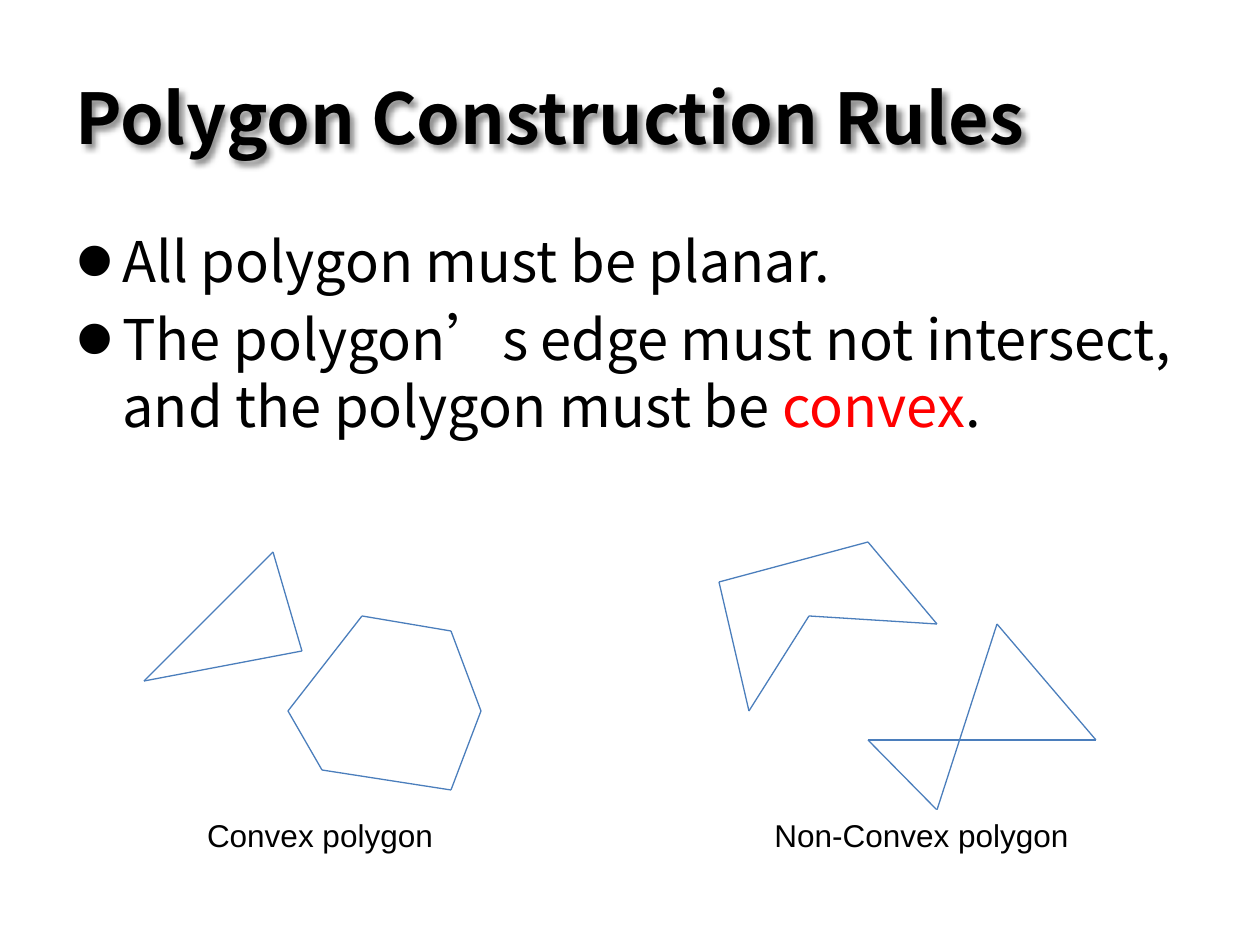
import itertools
import pptx
import pptx.dml.color
import pptx.enum.shapes
import pptx.enum.text
import pptx.oxml
import pptx.oxml.ns
import pptx.util

BLACK = pptx.dml.color.RGBColor(0x00, 0x00, 0x00)
WHITE = pptx.dml.color.RGBColor(0xFF, 0xFF, 0xFF)
RED = pptx.dml.color.RGBColor(0xFF, 0x00, 0x00)
BLUE = pptx.dml.color.RGBColor(0x4B, 0x7E, 0xBC)
NS = pptx.oxml.ns.nsdecls("a")
ANCHOR = pptx.enum.text.MSO_ANCHOR
ALIGN = pptx.enum.text.PP_ALIGN


def px(n):
    return pptx.util.Emu(round(n * 914400 / 126))


class Deck:
    heading_font = "Noto Sans CJK SC"
    label_font = "Arial"

    def __init__(self):
        self.prs = pptx.Presentation()
        self.prs.slide_width, self.prs.slide_height = px(1260), px(945)
        self.s = self.prs.slides.add_slide(self.prs.slide_layouts[6])

    def box(self, x, y, w, h, anchor=ANCHOR.TOP):
        sp = self.s.shapes.add_textbox(px(x), px(y), px(w), px(h))
        sp.text_frame.word_wrap = True
        sp.text_frame.vertical_anchor = anchor
        return sp

    def run(self, p, text, size, font, color=BLACK, bold=False):
        r = p.add_run()
        r.text = text
        r.font.size = pptx.util.Pt(size)
        r.font.bold = bold
        r.font.color.rgb = color
        r.font.name = font
        r.font._element.find(pptx.oxml.ns.qn("a:latin")).addnext(
            pptx.oxml.parse_xml(f'<a:ea {NS} typeface="{font}"/>'))

    def title(self, text, x, y, w, h):
        sp = self.box(x, y, w, h, ANCHOR.MIDDLE)
        self.run(sp.text_frame.paragraphs[0], text, 40, self.heading_font, bold=True)
        sp._element.spPr.append(pptx.oxml.parse_xml(
            f'<a:effectLst {NS}><a:outerShdw blurRad="38100" dist="38100" dir="2700000">'
            '<a:srgbClr val="000000"><a:alpha val="43000"/></a:srgbClr>'
            '</a:outerShdw></a:effectLst>'))

    def bullets(self, items, x, y, w, h):
        tf = self.box(x, y, w, h).text_frame
        for i, runs in enumerate(items):
            p = tf.add_paragraph() if i else tf.paragraphs[0]
            pPr = p._p.get_or_add_pPr()
            pPr.set("marL", str(px(47)))
            pPr.set("indent", str(-px(47)))
            for tag in ('buSzPct val="200000"', 'buFont typeface="Arial"', 'buChar char="•"'):
                pPr.append(pptx.oxml.parse_xml(f"<a:{tag} {NS}/>"))
            p.space_before = pptx.util.Pt(6.4 if i else 0)
            for text, color in runs:
                self.run(p, text, 32, self.heading_font, color)

    def label(self, text, x, y, w, h):
        sp = self.box(x, y, w, h)
        sp.fill.solid()
        sp.fill.fore_color.rgb = WHITE
        p = sp.text_frame.paragraphs[0]
        p.alignment = ALIGN.CENTER
        self.run(p, text, 18, self.label_font)

    def polygon(self, points):
        for start, end in itertools.pairwise(points + points[:1]):
            line = self.s.shapes.add_connector(
                pptx.enum.shapes.MSO_CONNECTOR.STRAIGHT, *map(px, start + end))
            line.line.color.rgb = BLUE
            line.line.width = pptx.util.Pt(0.75)
            line._element.spPr.append(pptx.oxml.parse_xml(f"<a:effectLst {NS}/>"))


def main():
    deck = Deck()
    deck.title("Polygon Construction Rules", 63, 38, 1023, 157)
    deck.bullets([
        [("All polygon must be planar.", BLACK)],
        [("The polygon’s edge must not intersect, and the polygon must be ", BLACK),
         ("convex", RED), (".", BLACK)],
    ], 63, 220, 1134, 301)

    triangle = [(273, 552), (144, 681), (302, 651)]
    hexagon = [(362, 616), (451, 631), (481, 711), (451, 790), (322, 770), (288, 711)]
    bow_tie = [(868, 740), (1096, 740), (997, 624), (937, 810)]
    arrow = [(868, 542), (719, 582), (749, 711), (809, 616), (937, 624)]
    for points in (triangle, hexagon, bow_tie, arrow):
        deck.polygon(points)

    deck.label("Convex polygon", 174, 810, 292, 50)
    deck.label("Non-Convex polygon", 745, 810, 353, 50)
    deck.prs.save("out.pptx")


if __name__ == "__main__":
    main()
